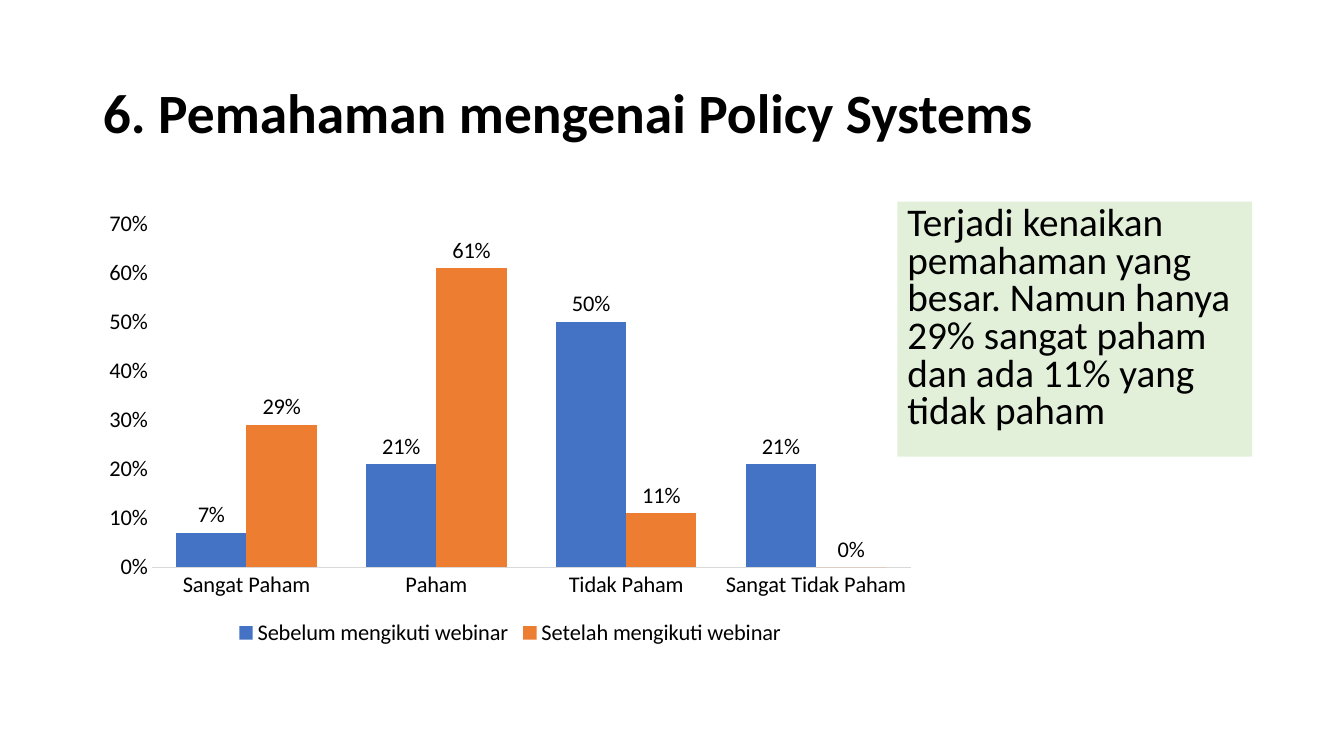
"""Build a slide comparing policy understanding before and after a webinar."""
from pptx import Presentation
from pptx.chart.data import CategoryChartData
from pptx.dml.color import RGBColor
from pptx.enum.chart import XL_CHART_TYPE, XL_LABEL_POSITION, XL_LEGEND_POSITION, XL_TICK_MARK
from pptx.enum.text import MSO_ANCHOR, MSO_AUTO_SIZE, PP_ALIGN
from pptx.util import Inches, Pt

BLACK = RGBColor(0x00, 0x00, 0x00)
BLUE = RGBColor(0x44, 0x72, 0xC4)
ORANGE = RGBColor(0xED, 0x7D, 0x31)
GREEN = RGBColor(0xE2, 0xF0, 0xD9)
GRAY = RGBColor(0xD9, 0xD9, 0xD9)
FACE = "Calibri"


def style(font, size, bold=False):
    font.name = FACE
    font.size = Pt(size)
    font.bold = bold
    font.color.rgb = BLACK


def write(shape, text, size, bold=False, anchor=MSO_ANCHOR.TOP, lead=1.0, before=0):
    frame = shape.text_frame
    frame.word_wrap = True
    frame.auto_size = MSO_AUTO_SIZE.NONE
    frame.vertical_anchor = anchor
    para = frame.paragraphs[0]
    para.alignment = PP_ALIGN.LEFT
    para.line_spacing = lead
    para.space_before = Pt(before)
    run = para.add_run()
    run.text = text
    style(run.font, size, bold)


deck = Presentation()
deck.slide_width = Inches(13.33)
deck.slide_height = Inches(7.5)
slide = deck.slides.add_slide(deck.slide_layouts[5])

title = slide.shapes.title
title.left, title.top = Inches(0.92), Inches(0.42)
title.width, title.height = Inches(11.5), Inches(1.45)
write(title, "6. Pemahaman mengenai Policy Systems", 39.6, bold=True,
      anchor=MSO_ANCHOR.MIDDLE, lead=0.9)

data = CategoryChartData(number_format="0%")
data.categories = ["Sangat Paham", "Paham", "Tidak Paham", "Sangat Tidak Paham"]
data.add_series("Sebelum mengikuti webinar", [0.07, 0.21, 0.5, 0.21])
data.add_series("Setelah mengikuti webinar", [0.29, 0.61, 0.11, 0])
chart = slide.shapes.add_chart(
    XL_CHART_TYPE.COLUMN_CLUSTERED,
    Inches(0.92), Inches(2), Inches(8.28), Inches(4.46), data).chart
style(chart.font, 16)
chart.has_title = False
chart.has_legend = True
chart.legend.position = XL_LEGEND_POSITION.BOTTOM
chart.legend.include_in_layout = False
style(chart.legend.font, 16)

for axis in (chart.category_axis, chart.value_axis):
    axis.has_major_gridlines = False
    axis.major_tick_mark = XL_TICK_MARK.NONE
    axis.minor_tick_mark = XL_TICK_MARK.NONE
    style(axis.tick_labels.font, 16)
chart.category_axis.format.line.color.rgb = GRAY
chart.category_axis.format.line.width = Pt(0.75)
scale = chart.value_axis
scale.format.line.fill.background()
scale.minimum_scale, scale.maximum_scale, scale.major_unit = 0, 0.7, 0.1
scale.tick_labels.number_format = "0%"
scale.tick_labels.number_format_is_linked = False

plot = chart.plots[0]
plot.gap_width = 70
plot.overlap = 0
plot.vary_by_categories = False
for series, color in zip(plot.series, (BLUE, ORANGE)):
    series.format.fill.solid()
    series.format.fill.fore_color.rgb = color
    labels = series.data_labels
    labels.show_value = True
    labels.position = XL_LABEL_POSITION.OUTSIDE_END
    labels.number_format = "0%"
    labels.number_format_is_linked = False
    style(labels.font, 16)

note = slide.shapes.add_textbox(Inches(8.9), Inches(2), Inches(3.52), Inches(2.53))
note.fill.solid()
note.fill.fore_color.rgb = GREEN
write(note, "Terjadi kenaikan pemahaman yang besar. Namun hanya 29% sangat paham "
      "dan ada 11% yang tidak paham", 28, lead=0.8, before=10)

deck.save("out.pptx")
